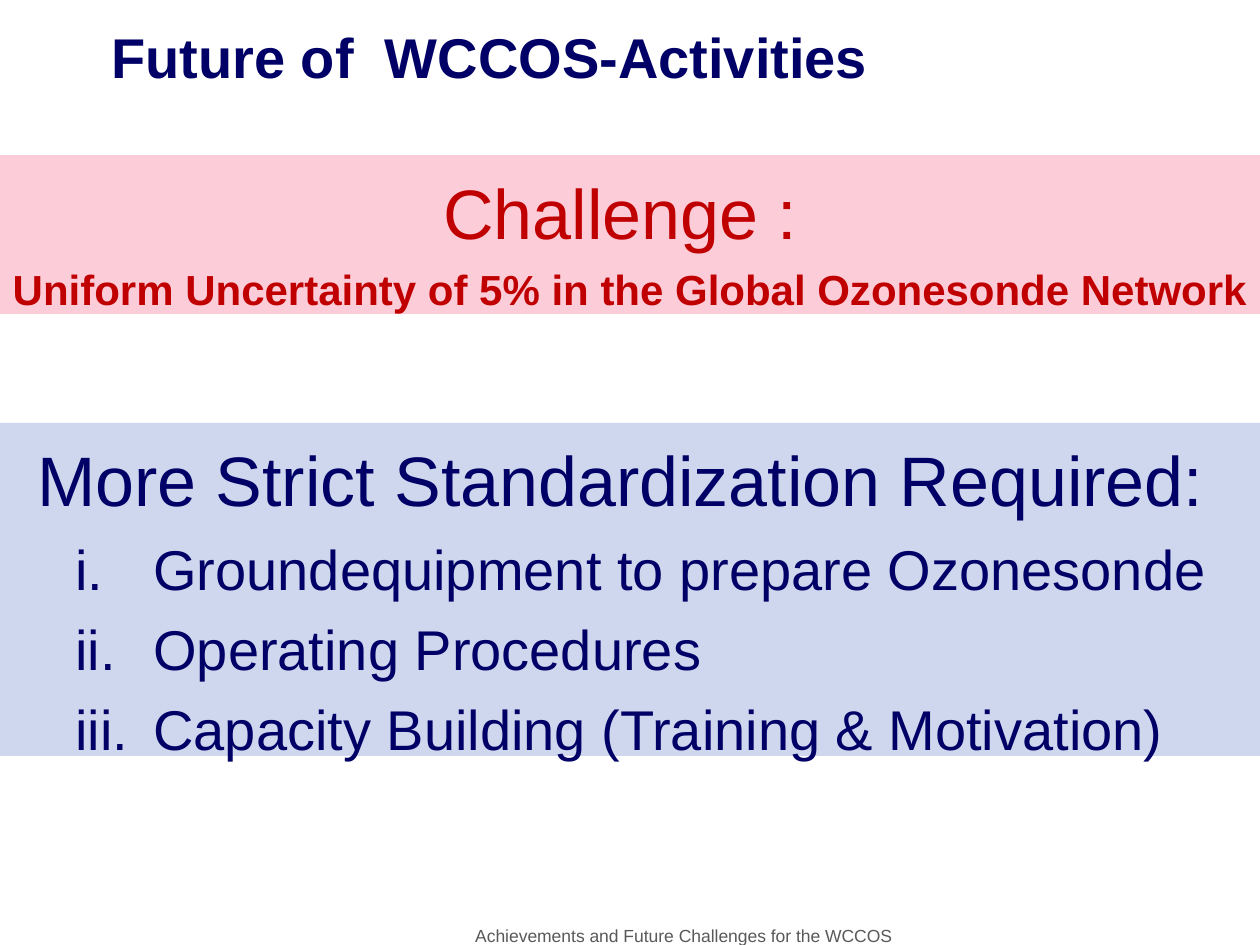
import pptx
import pptx.util
import pptx.dml.color
import pptx.enum.shapes
import pptx.enum.text
from lxml import etree

PX = 914400 // 126
COLORS = {"navy": "000066", "red": "C00000", "pink": "FCCCD8",
          "blue": "CED7EE", "gray": "595959"}
ALIGN = pptx.enum.text.PP_ALIGN
ITEMS = ["Groundequipment to prepare Ozonesonde", "Operating Procedures",
         "Capacity Building (Training & Motivation)"]


def px(length):
    return pptx.util.Emu(length * PX)


def rgb(name):
    return pptx.dml.color.RGBColor.from_string(COLORS[name])


def style(paragraph, size, color, bold=False, align=ALIGN.CENTER, before=0):
    paragraph.alignment = align
    paragraph.space_before = pptx.util.Pt(before)
    font = paragraph.font
    font.name, font.size, font.bold = "Arial", pptx.util.Pt(size), bold
    font.color.rgb = rgb(color)
    for run in paragraph.runs:
        run.font.name, run.font.size, run.font.bold = "Arial", pptx.util.Pt(size), bold
        run.font.color.rgb = rgb(color)


def add_label(slide, box, text, size, color, bold=False, wrap=True):
    frame = slide.shapes.add_textbox(*map(px, box)).text_frame
    frame.word_wrap = wrap
    frame.text = text
    style(frame.paragraphs[0], size, color, bold)


def add_band(slide, top, height, fill, heading, color):
    """Full-width colour band with a large centred heading."""
    band = slide.shapes.add_shape(
        pptx.enum.shapes.MSO_SHAPE.RECTANGLE, 0, px(top), px(1260), px(height))
    band.shadow.inherit = False
    band.fill.solid()
    band.fill.fore_color.rgb = rgb(fill)
    band.line.fill.background()
    frame = band.text_frame
    frame.word_wrap = True
    frame.vertical_anchor = pptx.enum.text.MSO_ANCHOR.TOP
    frame.margin_top = px(14)
    frame.text = heading
    style(frame.paragraphs[0], 40, color)
    return frame


def add_numbered(frame, text, color):
    paragraph = frame.add_paragraph()
    paragraph.text = text
    paragraph.level = 1
    properties = paragraph._p.get_or_add_pPr()
    properties.set("marL", str(px(141)))
    properties.set("indent", str(-px(78)))
    paragraph.space_before = pptx.util.Pt(0)
    number = etree.SubElement(
        properties, pptx.oxml.ns.qn("a:buAutoNum"))
    number.set("type", "romanLcPeriod")
    style(paragraph, 32, color, align=ALIGN.LEFT, before=7.5)


def main():
    deck = pptx.Presentation()
    deck.slide_width, deck.slide_height = px(1260), px(945)
    slide = deck.slides.add_slide(deck.slide_layouts[6])

    # Challenge
    challenge = add_band(slide, 155, 159, "pink", "Challenge : ", "red")
    goal = challenge.add_paragraph()
    goal.text = "Uniform Uncertainty of 5% in the Global Ozonesonde Network"
    style(goal, 24, "red", bold=True, before=6)

    # Title
    add_label(slide, (97, 16, 786, 80), "Future of  WCCOS-Activities",
              32, "navy", bold=True, wrap=False)

    # Required standardization
    required = add_band(slide, 423, 333, "blue",
                        "More Strict Standardization Required: ", "navy")
    for item in ITEMS:
        add_numbered(required, item, "navy")

    # Footer
    add_label(slide, (382, 919, 603, 34),
              "Achievements and Future Challenges for the WCCOS", 10, "gray")

    deck.save("out.pptx")


if __name__ == "__main__":
    main()
